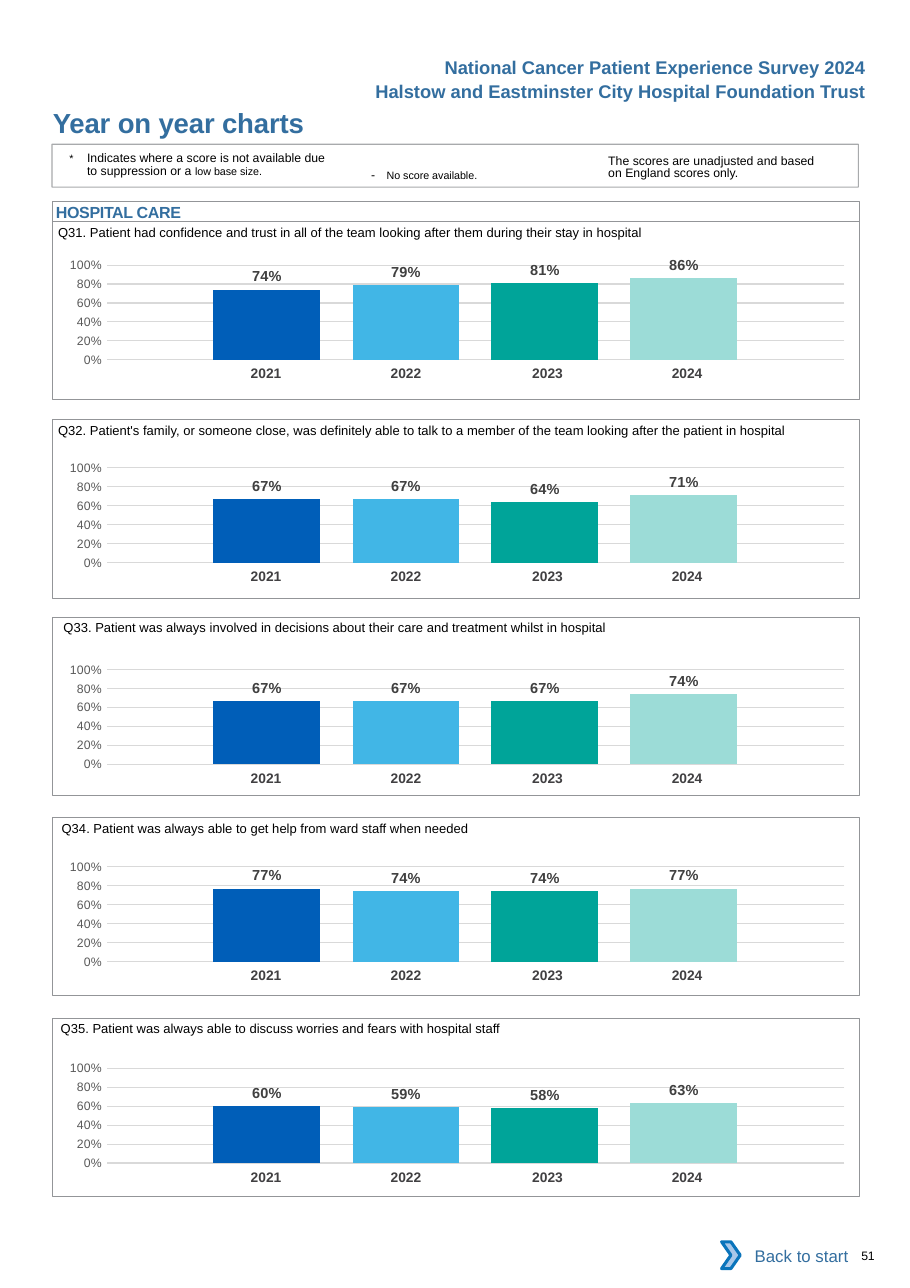
import pptx
import pptx.util
import pptx.dml.color
import pptx.chart.data
import pptx.enum.chart
import pptx.enum.shapes
import pptx.enum.text
import pptx.oxml
import pptx.oxml.ns

Pt = pptx.util.Pt
RGB = pptx.dml.color.RGBColor
Shape = pptx.enum.shapes.MSO_SHAPE
Align = pptx.enum.text.PP_ALIGN
Anchor = pptx.enum.text.MSO_ANCHOR
qn = pptx.oxml.ns.qn

BLUE = RGB(0x33, 0x6E, 0x9F)
BLACK = RGB(0, 0, 0)
WHITE = RGB(255, 255, 255)
EDGE = RGB(0x93, 0x95, 0x98)
GRID = RGB(0xD9, 0xD9, 0xD9)
TICK = RGB(0x59, 0x59, 0x59)
LABEL = RGB(0x40, 0x40, 0x40)
YEAR = RGB(0x41, 0x40, 0x42)
ARROW = RGB(0xA8, 0xC7, 0xE9)
RIM = RGB(0x0A, 0x74, 0xBB)
BARS = [RGB(0x00, 0x5E, 0xB8), RGB(0x41, 0xB6, 0xE6),
        RGB(0x00, 0xA4, 0x99), RGB(0x9C, 0xDC, 0xD7)]

TITLE = "Year on year charts"
HEADS = ["National Cancer Patient Experience Survey 2024",
         "Halstow and Eastminster City Hospital Foundation Trust"]
# year, column width, right margin
YEARS = [("2021", 91.5, 0), ("2022", 91.5, 0), ("2023", 96.5, 3), ("2024", 91.5, 8.5)]
# panel top, chart top, question left, question, scores
PANELS = [
    (144.7, 159.8, 38, "Q31. Patient had confidence and trust in all of the team looking "
     "after them during their stay in hospital", (0.74, 0.79, 0.81, 0.86)),
    (274.3, 292.3, 38, "Q32. Patient's family, or someone close, was definitely able to talk "
     "to a member of the team looking after the patient in hospital", (0.67, 0.67, 0.64, 0.71)),
    (403.2, 424.1, 41.5, "Q33. Patient was always involved in decisions about their care and "
     "treatment whilst in hospital", (0.67, 0.67, 0.67, 0.74)),
    (534.2, 553, 40.3, "Q34. Patient was always able to get help from ward staff when needed",
     (0.77, 0.74, 0.74, 0.77)),
    (665.3, 684.7, 39.7, "Q35. Patient was always able to discuss worries and fears with "
     "hospital staff", (0.60, 0.59, 0.58, 0.63)),
]
LEFT, WIDE, HIGH = 34.5, 527, 116.6
PLOT = {"x": 0.079, "y": 0.145, "w": 0.915, "h": 0.666}

deck = pptx.Presentation()
deck.slide_width, deck.slide_height = Pt(594.72), Pt(841.68)
slide = deck.slides.add_slide(deck.slide_layouts[5])


def style(font, size, color, bold=False, name="Arial"):
    font.name, font.size, font.bold = name, Pt(size), bold
    font.color.rgb = color


def write(para, text, size, color=BLACK, bold=False, track=0):
    """Add one run; track is letter spacing in points."""
    run = para.add_run()
    run.text = text
    style(run.font, size, color, bold)
    if track:
        run._r.get_or_add_rPr().set("spc", str(round(track * 100)))


def bare(frame, wrap=True, anchor=Anchor.TOP):
    """Clear the margins of a text frame and return its first paragraph."""
    frame.margin_left = frame.margin_right = frame.margin_top = frame.margin_bottom = 0
    frame.word_wrap, frame.vertical_anchor = wrap, anchor
    para = frame.paragraphs[0]
    para.alignment = Align.LEFT
    return para


def label(x, y, w, h):
    box = slide.shapes.add_textbox(Pt(x), Pt(y), Pt(w), Pt(h))
    return bare(box.text_frame)


def block(kind, x, y, w, h, line=EDGE, width=0.5, fill=None):
    shape = slide.shapes.add_shape(kind, Pt(x), Pt(y), Pt(w), Pt(h))
    shape.shadow.inherit = False
    if fill is None:
        shape.fill.background()
    else:
        shape.fill.solid()
        shape.fill.fore_color.rgb = fill
    if line is None:
        shape.line.fill.background()
    else:
        shape.line.color.rgb = line
        shape.line.width = Pt(width)
    return shape


def graph(y, scores):
    data = pptx.chart.data.CategoryChartData(number_format="0%")
    data.categories = ["1"]
    for i, score in enumerate(scores, 1):
        data.add_series(f"Series {i}", [score])
    chart = slide.shapes.add_chart(pptx.enum.chart.XL_CHART_TYPE.COLUMN_CLUSTERED,
                                   Pt(28), Pt(y), Pt(WIDE), Pt(93), data).chart
    style(chart.font, 10, BLACK, name="Calibri")
    chart.has_legend = chart.has_title = False
    chart.category_axis.visible = False
    axis = chart.value_axis
    axis.minimum_scale, axis.maximum_scale, axis.major_unit = 0, 1, 0.2
    axis.major_tick_mark = pptx.enum.chart.XL_TICK_MARK.NONE
    axis.format.line.fill.background()
    axis.major_gridlines.format.line.color.rgb = GRID
    axis.major_gridlines.format.line.width = Pt(0.75)
    axis.tick_labels.number_format = "0%"
    axis.tick_labels.number_format_is_linked = False
    style(axis.tick_labels.font, 8, TICK)
    plot = chart.plots[0]
    plot.gap_width, plot.overlap, plot.vary_by_categories = 200, -30, False
    for bar, color in zip(plot.series, BARS):
        bar.format.fill.solid()
        bar.format.fill.fore_color.rgb = color
        tags = bar.data_labels
        tags.show_value, tags.number_format = True, "0%"
        tags.number_format_is_linked = False
        tags.position = pptx.enum.chart.XL_LABEL_POSITION.OUTSIDE_END
        style(tags.font, 9.5, LABEL, True)
    inner = chart._chartSpace.chart.plotArea
    for old in inner.findall(qn("c:layout")):
        inner.remove(old)
    parts = "".join(f'<c:{k}Mode val="edge"/>' for k in "xy")
    parts += "".join(f'<c:{k} val="{v}"/>' for k, v in PLOT.items())
    inner.insert(0, pptx.oxml.parse_xml(
        f'<c:layout {pptx.oxml.ns.nsdecls("c")}><c:manualLayout>'
        f'<c:layoutTarget val="inner"/>{parts}</c:manualLayout></c:layout>'))


def years(y):
    """Table row that names the columns of a chart."""
    total = sum(w for _, w, _ in YEARS)
    table = slide.shapes.add_table(1, len(YEARS), Pt(124.5), Pt(y), Pt(total), Pt(19.5)).table
    table.first_row = table.horz_banding = False
    plain = table._tbl.tblPr.find(qn("a:tableStyleId"))
    plain.text = "{2D5ABB26-0587-4C30-8999-92F81FD0307C}"
    table.rows[0].height = Pt(19.5)
    for i, (year, width, right) in enumerate(YEARS):
        table.columns[i].width = Pt(width)
        cell = table.cell(0, i)
        cell.fill.background()
        cell.margin_left, cell.margin_right = Pt(7.2), Pt(right)
        cell.margin_top = cell.margin_bottom = Pt(3.6)
        para = cell.text_frame.paragraphs[0]
        para.alignment = Align.CENTER
        write(para, year, 9, YEAR, True)


# Heading
title = slide.shapes.title
title.left, title.top, title.width, title.height = Pt(34.5), Pt(69.5), Pt(324), Pt(21.5)
write(bare(title.text_frame), TITLE, 18, BLUE, True, -0.1)
for i, head in enumerate(HEADS):
    para = label(220, 36.7 + 16 * i, 346, 15)
    para.alignment = Align.RIGHT
    write(para, head, 12, BLUE, True)

# Key
key = block(Shape.RECTANGLE, 34, 94.3, WIDE, 28, width=0.75)
tint = key.line.fill._xPr.find(".//" + qn("a:srgbClr"))
tint.append(pptx.oxml.parse_xml(f'<a:alpha {pptx.oxml.ns.nsdecls("a")} val="80000"/>'))
para = label(45.4, 100, 172, 17)
para.line_spacing = Pt(8.1)
para._p.get_or_add_pPr().set("marL", str(Pt(11.5)))
para._p.get_or_add_pPr().set("indent", str(-Pt(11.5)))
write(para, "*\t", 7)
write(para, "Indicates where a score is not available due to suppression or a ", 8)
write(para, "low base size.", 7)
para = label(242.6, 109.5, 120, 10)
write(para, "- ", 8, track=2.6)
write(para, "No score available.", 7)
para = label(397.5, 101.5, 140, 17)
para.line_spacing = Pt(8.1)
write(para, "The scores are unadjusted and based on England scores only.", 8)

# Panels
band = block(Shape.RECTANGLE, LEFT, 131.8, WIDE, 12.9)
para = bare(band.text_frame, anchor=Anchor.MIDDLE)
band.text_frame.margin_left = Pt(2)
write(para, "HOSPITAL CARE", 10.5, BLUE, True, -0.2)
for top, mid, left, ask, scores in PANELS:
    block(Shape.RECTANGLE, LEFT, top, WIDE, HIGH)
    write(label(left, top + 1.8, 515, 11), ask, 8.5)
    graph(mid, scores)
    years(mid + 76)

# Footer
back = block(Shape.RECTANGLE, 476.6, 805.7, 85, 30, line=None, fill=WHITE)
para = bare(back.text_frame, anchor=Anchor.MIDDLE)
back.text_frame.margin_right = Pt(7.2)
para.alignment = Align.RIGHT
write(para, "Back to start", 11, BLUE)
block(Shape.CHEVRON, 471.6, 811.5, 12.2, 17.5, RIM, 2, ARROW)
write(label(563, 815.5, 30, 10), "51", 8, track=-0.2)

deck.save("out.pptx")
